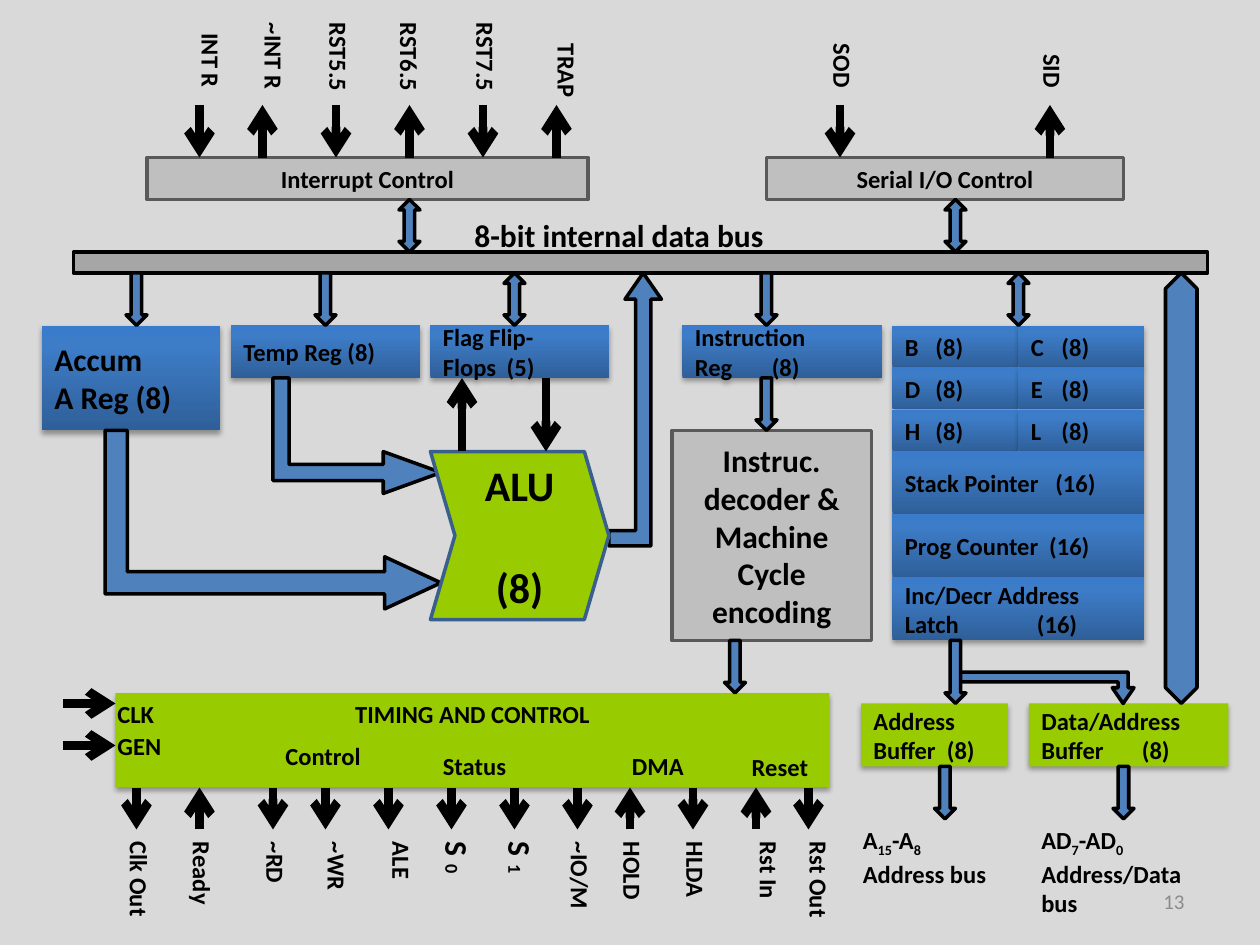
"""Build a one-slide block diagram of an 8-bit microprocessor."""
from copy import deepcopy

from lxml import etree
from pptx import Presentation
from pptx import util as u
from pptx.dml.color import RGBColor
from pptx.enum import shapes, text
from pptx.oxml.ns import qn

Pt = u.Pt
KIND = shapes.MSO_SHAPE
LEFT, CENTER, RIGHT = text.PP_ALIGN.LEFT, text.PP_ALIGN.CENTER, text.PP_ALIGN.RIGHT
TOP, MIDDLE = text.MSO_ANCHOR.TOP, text.MSO_ANCHOR.MIDDLE

BLACK = RGBColor(0x00, 0x00, 0x00)
BACKDROP = RGBColor(0xD9, 0xD9, 0xD9)
BUS_GRAY = RGBColor(0xA6, 0xA6, 0xA6)
BOX_GRAY = RGBColor(0xBF, 0xBF, 0xBF)
EDGE_GRAY = RGBColor(0x59, 0x59, 0x59)
NUMBER_GRAY = RGBColor(0x8C, 0x8C, 0x8C)
GREEN = RGBColor(0x99, 0xCC, 0x00)
ARROW_BLUE = RGBColor(0x4F, 0x81, 0xBD)
EDGE_BLUE = RGBColor(0x3A, 0x5F, 0x8C)
REGISTER_STOPS = [
    (0, RGBColor(0x2F, 0x5F, 0x99)),
    (0.8, RGBColor(0x3D, 0x7C, 0xC7)),
    (1, RGBColor(0x3A, 0x7C, 0xCB)),
]

CONTROL_BOXES = [
    ((84, 90, 252, 24), "Interrupt Control", 14),
    ((438, 90, 204, 24), "Serial I/O Control", 14),
    ((384, 246, 114, 120), "Instruc. decoder & Machine Cycle encoding", 18),
]
REGISTERS = [
    ((24, 186, 102, 60), ["Accum", "A Reg (8)"], 18, None),
    ((132, 186, 108, 30), ["Temp Reg (8)"], 14, None),
    ((246, 186, 102, 30), ["Flag Flip-", "Flops\t(5)"], 14, 36.5),
    ((390, 186, 114, 30), ["Instruction", "Reg\t(8)"], 14, 44),
]
REGISTER_PAIRS = ["BC", "DE", "HL"]
WIDE_REGISTERS = [
    ("Stack Pointer\t(16)", 86),
    ("Prog Counter\t(16)", 82.5),
    ("Inc/Decr Address Latch\t(16)", 75.5),
]
BUFFERS = [
    ((492, 402, 84, 36), ["Address", "Buffer\t(8)"], 42),
    ((588, 402, 114, 36), ["Data/Address", "Buffer\t(8)"], 57.5),
]
BENT_ARROWS = [
    (KIND.BENT_ARROW, (588, 342, 18, 102), 90, [0.316, 0.345, 0.5, 0]),
    (KIND.BENT_UP_ARROW, (348, 156, 30, 156), 0, [0.292, 0.347, 0.5]),
    (KIND.BENT_UP_ARROW, (171, 201, 66, 96), 90, [0.139, 0.181, 0.5]),
    (KIND.BENT_UP_ARROW, (105, 201, 102, 192), 90, [0.125, 0.146, 0.316]),
]
DOWN_ARROWS = [
    (72, 156, 30), (180, 156, 30), (432, 156, 30), (432, 216, 30),
    (414, 366, 30), (540, 366, 36), (534, 438, 30), (636, 438, 30),
]
TWO_WAY_ARROWS = [(228, 114, 30), (540, 114, 30), (288, 156, 30), (576, 156, 30)]
TOP_PINS = [
    (114, "in", "INT R", 101, 12, 54), (150, "out", "~INT R", 137, 6, 54),
    (192, "in", "RST5.5", 174, 6, 66), (234, "out", "RST6.5", 214.5, 6, 66),
    (276, "in", "RST7.5", 258, 6, 66), (318, "out", "TRAP", 304.5, 18, 66),
    (480, "in", "SOD", 462, 18, 66), (600, "out", "SID", 582, 24, 66),
]
BOTTOM_PINS = [
    (78, "out", "Clk Out", 60), (114, "in", "Ready", 96), (156, "out", "~RD", 138),
    (186, "out", "~WR", 173), (222, "out", "ALE", 210), (258, "out", ("S", "0"), 240),
    (294, "out", ("S", "1"), 276), (330, "out", "~IO/M", 312), (360, "in", "HOLD", 342),
    (396, "out", "HLDA", 378), (432, "in", "Rst In", 420), (462, "out", "Rst Out", 448.5),
]
TIMING_LABELS = [
    ("CLK", 60, 396, 41), ("GEN", 60, 414, 43), ("Control", 156, 420, 65.5),
    ("Status", 246, 425.5, 57), ("DMA", 354, 425.5, 47), ("Reset", 422.5, 426, 52),
]
BUS_LABELS = [
    ((264, 120, 270, 29), ["8-bit internal data bus"], 18),
    ((486, 468, 102, 41), [("A", "15", "-A", "8"), "Address bus"], 14),
    ((588, 468, 114, 58), [("AD", "7", "-AD", "0"), "Address/Data bus"], 14),
]

deck = Presentation()
deck.slide_width, deck.slide_height = Pt(720), Pt(540)
page = deck.slides.add_slide(deck.slide_layouts[6])
page.background.fill.solid()
page.background.fill.fore_color.rgb = BACKDROP


def write(box, lines, size=14, align=LEFT, anchor=MIDDLE, tab=None, color=BLACK, bold=True):
    """Fill a box with lines; every second part of a tuple line is a subscript."""
    frame = box.text_frame
    frame.word_wrap, frame.vertical_anchor = True, anchor
    for index, line in enumerate(lines):
        para = frame.add_paragraph() if index else frame.paragraphs[0]
        para.alignment = align
        if "\t" in line:
            stops = etree.SubElement(para._p.get_or_add_pPr(), qn("a:tabLst"))
            etree.SubElement(stops, qn("a:tab"), pos=str(Pt(tab)), algn="l")
        for place, part in enumerate([line] if isinstance(line, str) else line):
            span = para.add_run()
            span.text = part
            font = span.font
            font.name, font.size, font.bold = "Calibri", Pt(size), bold
            font.color.rgb = color
            if place % 2:
                font._element.set("baseline", "-25000")


def add_block(kind, frame, fill=None, edge=None):
    """Add a preset shape with a solid fill and an optional outline."""
    block = page.shapes.add_shape(kind, *map(Pt, frame))
    block.shadow.inherit = False
    if fill is not None:
        block.fill.solid()
        block.fill.fore_color.rgb = fill
    if edge is None:
        block.line.fill.background()
    else:
        block.line.color.rgb, block.line.width = edge, Pt(2)
    return block


def add_raised(frame, fill=None):
    """Add a shadowed box, green or with the register gradient."""
    box = add_block(KIND.RECTANGLE, frame, fill)
    if fill is None:
        box.fill.gradient()
        box.fill.gradient_angle = 90
        stops = box._element.spPr.find(".//" + qn("a:gsLst"))
        stops.append(deepcopy(stops[0]))
        for stop, (position, color) in zip(box.fill.gradient_stops, REGISTER_STOPS):
            stop.position, stop.color.rgb = position, color
    effects = box._element.spPr.find(qn("a:effectLst"))
    shade = etree.SubElement(effects, qn("a:outerShdw"), blurRad=str(Pt(3.1)),
                             dist=str(Pt(1.8)), dir="5400000", rotWithShape="0")
    tint = etree.SubElement(shade, qn("a:srgbClr"), val=str(BLACK))
    etree.SubElement(tint, qn("a:alpha"), val="35000")
    return box


def add_block_arrow(kind, frame, adjustments=(), rotation=0):
    """Add a blue block arrow."""
    arrow = add_block(kind, frame, ARROW_BLUE, BLACK)
    arrow.rotation = rotation
    for index, value in enumerate(adjustments):
        arrow.adjustments[index] = value


def add_signal(*ends):
    """Add a thick black arrow between two points."""
    signal = page.shapes.add_connector(shapes.MSO_CONNECTOR.STRAIGHT, *map(Pt, ends))
    signal.line.color.rgb, signal.line.width = BLACK, Pt(5)
    etree.SubElement(signal.line._get_or_add_ln(), qn("a:tailEnd"), type="arrow")
    etree.SubElement(signal._element.spPr, qn("a:effectLst"))


def add_label(frame, lines, size=14, vertical=False, wrap=True):
    """Add a free label that fits its text."""
    label = page.shapes.add_textbox(*map(Pt, frame))
    write(label, lines, size, anchor=TOP)
    label.text_frame.word_wrap = wrap
    label.text_frame.auto_size = text.MSO_AUTO_SIZE.SHAPE_TO_FIT_TEXT
    if vertical:
        label.text_frame._txBody.bodyPr.set("vert", "eaVert")


number = page.shapes.add_textbox(Pt(516), Pt(500.5), Pt(168), Pt(28.75))
write(number, ["13"], 12, RIGHT, color=NUMBER_GRAY, bold=False)
add_block(KIND.RECTANGLE, (42, 144, 648, 12), BUS_GRAY, BLACK)

for frame, title, size in CONTROL_BOXES:
    write(add_block(KIND.RECTANGLE, frame, BOX_GRAY, EDGE_GRAY), [title], size, CENTER)
for frame, lines, size, tab in REGISTERS:
    write(add_raised(frame), lines, size, tab=tab)
for row, pair in enumerate(REGISTER_PAIRS):
    for column, name in enumerate(pair):
        cell = add_raised((510 + 72 * column, 186 + 24 * row, 72, 24))
        write(cell, [name + "\t(8)"], tab=17.5)
for row, (title, tab) in enumerate(WIDE_REGISTERS):
    write(add_raised((510, 258 + 36 * row, 144, 36)), [title], tab=tab)
for frame, lines, tab in BUFFERS:
    write(add_raised(frame, GREEN), lines, tab=tab)
write(add_raised((66, 396, 408, 54), GREEN), ["TIMING AND CONTROL"], align=CENTER, anchor=TOP)

for kind, frame, rotation, adjustments in BENT_ARROWS:
    add_block_arrow(kind, frame, adjustments, rotation)
for left, top, height in DOWN_ARROWS:
    add_block_arrow(KIND.DOWN_ARROW, (left, top, 12, height))
for left, top, height in TWO_WAY_ARROWS:
    add_block_arrow(KIND.UP_DOWN_ARROW, (left, top, 12, height))
add_block_arrow(KIND.UP_DOWN_ARROW, (666, 156, 18, 246), [0.5, 1.3])

alu = add_block(KIND.CHEVRON, (246, 258, 102, 96), GREEN, EDGE_BLUE)
alu.adjustments[0] = 0.146
write(alu, ["ALU", "(8)"], 24, CENTER)
alu.text_frame.paragraphs[1].space_before = Pt(29.3)

add_signal(264, 258, 264, 216)
add_signal(312, 216, 312, 258)
for y in (402, 426):
    add_signal(36, y, 66, y)
for x, way, name, left, top, height in TOP_PINS:
    add_signal(x, *((60, x, 90) if way == "in" else (90, x, 60)))
    add_label((left, top, 31.75, height), [name], vertical=True)
for x, way, name, left in BOTTOM_PINS:
    add_signal(x, *((474, x, 450) if way == "in" else (450, x, 474)))
    width, size = (31.75, 14) if isinstance(name, str) else (36, 18)
    add_label((left, 474, width, 72), [name], size, vertical=True)
for name, left, top, width in TIMING_LABELS:
    add_label((left, top, width, 24.25), [name], wrap=False)
for frame, lines, size in BUS_LABELS:
    add_label(frame, lines, size)

deck.save("out.pptx")
